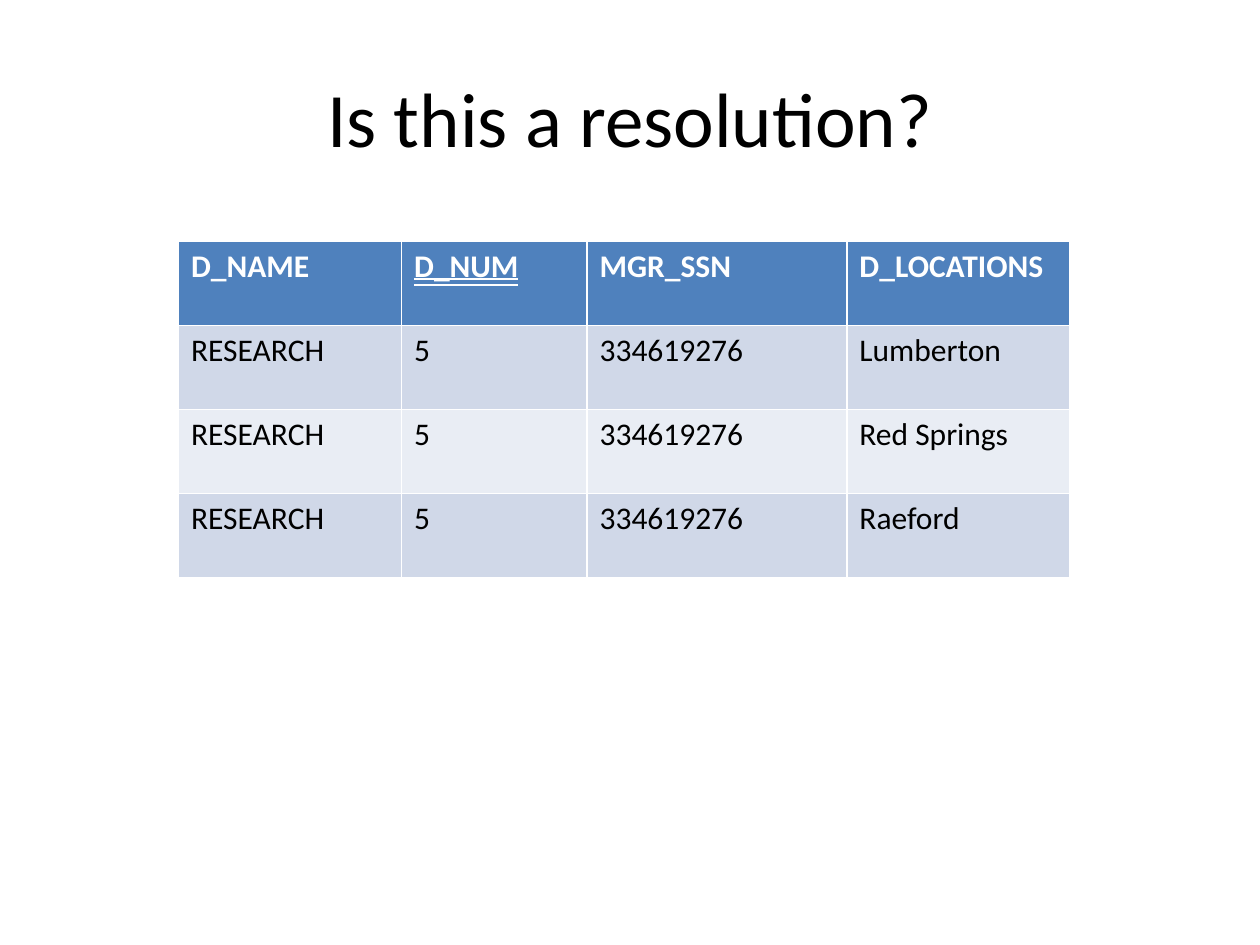
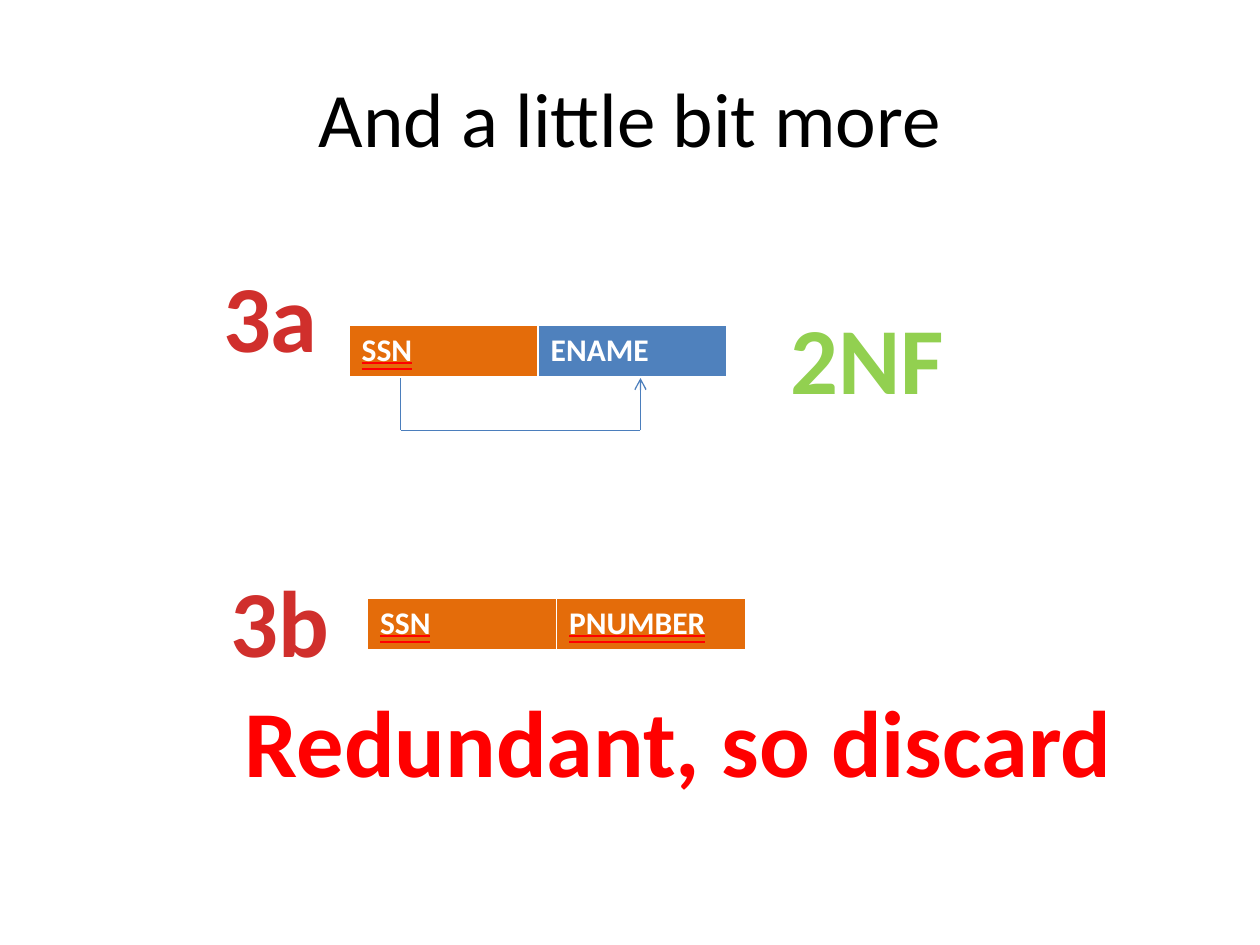
from lxml import etree
from pptx import Presentation
from pptx.dml.color import RGBColor
from pptx.enum import shapes, text
from pptx.oxml import ns
from pptx.util import Pt

FONT = "Calibri"
WHITE, BLACK, RED, GREEN = "FFFFFF", "000000", "FF0000", "92D050"
BLUE, ORANGE, LINE_BLUE = "4F81BD", "E46C0A", "4B7EBC"
BANDS = ["D0D8E8", "E9EDF4"]
LABEL_STOPS = [(0, "FC7C7A"), (75, "D02F2C"), (100, "C70500")]
KEYS = {"D_NUM", "SSN", "PNUMBER"}


def write(frame, words, size, color, bold=True):
    para = frame.paragraphs[0]
    para.text = words
    para.font.name = FONT
    para.font.size = Pt(size)
    para.font.bold = bold
    para.font.color.rgb = RGBColor.from_string(color)
    return para


def add_grid(page, left, top, widths, height, rows, fills, key_line=WHITE):
    """Add a table with white bold headings; fills holds one colour per cell."""
    table = page.shapes.add_table(len(rows), len(widths), Pt(left), Pt(top),
                                  Pt(sum(widths)), Pt(height * len(rows))).table
    table.horz_banding = False
    for column, width in zip(table.columns, widths):
        column.width = Pt(width)
    for r, (row, row_fills) in enumerate(zip(rows, fills)):
        table.rows[r].height = Pt(height)
        for c, (words, fill) in enumerate(zip(row, row_fills)):
            cell = table.cell(r, c)
            cell.fill.solid()
            cell.fill.fore_color.rgb = RGBColor.from_string(fill)
            heading = r == 0
            para = write(cell.text_frame, words, 18, WHITE if heading else BLACK, heading)
            if words in KEYS:
                font = para.runs[0].font
                font.underline = text.MSO_UNDERLINE.DOUBLE_LINE
                underline = etree.SubElement(para.runs[0]._r.get_or_add_rPr(), ns.qn("a:uFill"))
                solid = etree.SubElement(underline, ns.qn("a:solidFill"))
                etree.SubElement(solid, ns.qn("a:srgbClr"), val=key_line)


deck = Presentation()
deck.slide_width, deck.slide_height = Pt(720), Pt(540)
pages = []
for title in ["Is this a resolution?", "And a little bit more"]:
    page = deck.slides.add_slide(deck.slide_layouts[5])
    page.shapes.title.text = title
    pages.append(page)
resolution, more = pages

# Department table, one row per location
locations = ["Lumberton", "Red Springs", "Raeford"]
departments = [["D_NAME", "D_NUM", "MGR_SSN", "D_LOCATIONS"]]
departments += [["RESEARCH", "5", "334619276", place] for place in locations]
department_fills = [[BLUE] * 4] + [[BANDS[i % 2]] * 4 for i in range(len(locations))]
add_grid(resolution, 102, 138, [127.5, 106, 148.5, 127.5], 48, departments, department_fills)

# Relations 3a and 3b
add_grid(more, 199.5, 186, [108, 108], 29.2, [["SSN", "ENAME"]], [[ORANGE, BLUE]], RED)
add_grid(more, 210, 342, [108, 108], 29.2, [["SSN", "PNUMBER"]], [[ORANGE, ORANGE]], RED)

# Dependency from SSN to ENAME
corners = [(229, 216), (229, 246), (366, 246), (366, 216)]
for start, end in zip(corners, corners[1:]):
    line = more.shapes.add_connector(shapes.MSO_CONNECTOR.STRAIGHT,
                                     *(Pt(value) for value in start + end))
    line.line.color.rgb = RGBColor.from_string(LINE_BLUE)
    line.line.width = Pt(0.75)
    if end == corners[-1]:
        etree.SubElement(line.line._get_or_add_ln(), ns.qn("a:tailEnd"), type="arrow")
    etree.SubElement(line._element.spPr, ns.qn("a:effectLst"))

# Large labels; those without a colour get the red gradient
labels = [
    ("3a", 120, 144, 69, None, False),
    ("3b", 124.5, 318, 71, None, False),
    ("2NF", 444, 168, 103, GREEN, False),
    ("Redundant, so discard", 91.5, 387, 592.5, RED, True),
]
for words, left, top, width, color, wrap in labels:
    box = more.shapes.add_textbox(Pt(left), Pt(top), Pt(width), Pt(72.7))
    box.text_frame.word_wrap = wrap
    box.text_frame.auto_size = text.MSO_AUTO_SIZE.SHAPE_TO_FIT_TEXT
    para = write(box.text_frame, words, 54, color or RED)
    para.alignment = text.PP_ALIGN.CENTER
    if color is None:
        fill = para.runs[0].font.fill
        fill.gradient()
        fill.gradient_angle = 270
        stop_list = para.runs[0]._r.rPr.find(ns.qn("a:gradFill")).find(ns.qn("a:gsLst"))
        for stop in list(stop_list):
            stop_list.remove(stop)
        for position, shade in LABEL_STOPS:
            stop = etree.SubElement(stop_list, ns.qn("a:gs"), pos=str(position * 1000))
            etree.SubElement(stop, ns.qn("a:srgbClr"), val=shade)

deck.save("out.pptx")
